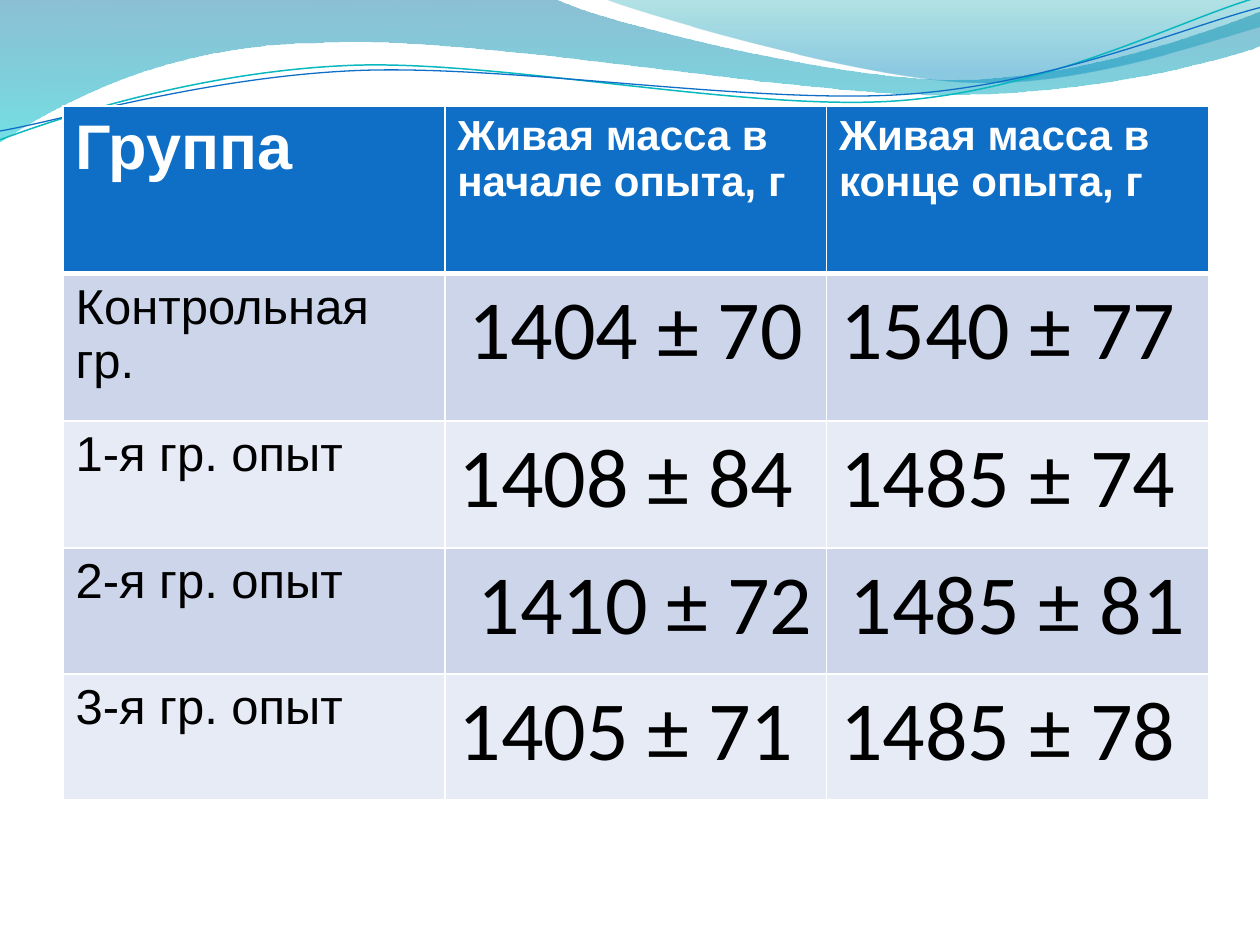
from math import cos, radians, sin

from lxml import etree
from pptx import Presentation
from pptx.dml.color import RGBColor
from pptx.enum.text import PP_ALIGN
from pptx.oxml.ns import qn
from pptx.util import Inches, Pt

CENTER = PP_ALIGN.CENTER
LEFT = PP_ALIGN.LEFT
BLANK_LAYOUT = 6
LINE_ROTATION = 357.3

HEADER_FILL = "0F6FC6"
BAND_FILLS = ("CCD5EA", "E7EBF5")
WHITE, BLACK = "FFFFFF", "000000"

# Wave outlines in inches: two numbers are a line, six a Bezier curve
BROAD_WAVE = [
    (0, -0.01), (4.4, -0.01),
    (4.76, 0.17, 6.64, 0.63, 7.58, 0.63), (8.53, 0.63, 9.58, 0.26, 10, 0.09),
    (10.01, 0.36),
    (9.83, 0.44, 8.7, 0.76, 7.46, 0.75), (6.22, 0.75, 3.82, 0.28, 2.57, 0.34),
    (1.29, 0.35, 0.46, 0.83, -0.01, 1.13), (0, -0.01),
]
RIGHT_WAVE = [
    (4.79, -0.01),
    (5.09, 0.11, 6.82, 0.62, 7.69, 0.65), (8.56, 0.69, 9.61, 0.32, 10, 0.21),
    (10, 0), (4.79, -0.01),
]
TEAL_LINE = [
    (0, 1.11),
    (0.48, 0.93, 1.58, 0.57, 2.77, 0.52), (3.95, 0.47, 5.93, 0.89, 7.13, 0.8),
    (8.33, 0.71, 9.38, 0.15, 9.98, -0.02),
]
BLUE_LINE = [
    (0, 1.04),
    (0.47, 0.96, 1.64, 0.61, 2.83, 0.56), (4.03, 0.51, 5.97, 0.83, 7.17, 0.75),
    (8.36, 0.67, 9.41, 0.21, 10, 0.06),
]

HEADERS = [
    ("Группа", 36),
    ("Живая масса в начале опыта, г", 24),
    ("Живая масса в конце опыта, г", 24),
]
GROUPS = [
    ("Контрольная гр.", "1404 ± 70", "1540 ± 77 "),
    ("1-я гр. опыт", "1408 ± 84 ", "1485 ± 74 "),
    ("2-я гр. опыт", " 1410 ± 72", "1485 ± 81"),
    ("3-я гр. опыт", "1405 ± 71 ", "1485 ± 78 "),
]
ROW_HEIGHTS = (1.33, 1.17, 1.01, 1, 1)


def color(hex_string):
    return RGBColor.from_string(hex_string)


def add_outline(slide, outline, box, rotation=0, close=False):
    """Freeform with Bezier curves, turned about the middle of its box."""
    left, top, width, height = box
    builder = slide.shapes.build_freeform(Inches(left), Inches(top))
    builder.add_line_segments(
        [(Inches(left + width), Inches(top + height))], close=False)
    shape = builder.convert_to_shape()
    shape.shadow.inherit = False
    shape.rotation = rotation
    cosine, sine = cos(radians(rotation)), sin(radians(rotation))

    # Replace the diagonal by the segments, in the box before it is turned
    geometry = shape.element.find(".//" + qn("a:path"))
    for child in list(geometry):
        geometry.remove(child)
    for index, segment in enumerate(outline):
        tag = "a:cubicBezTo" if len(segment) == 6 else "a:lnTo"
        step = etree.SubElement(geometry, qn(tag if index else "a:moveTo"))
        for x, y in zip(segment[::2], segment[1::2]):
            across, down = x - left - width / 2, y - top - height / 2
            local_x = across * cosine + down * sine + width / 2
            local_y = down * cosine - across * sine + height / 2
            etree.SubElement(step, qn("a:pt"), x=str(Inches(local_x)),
                             y=str(Inches(local_y)))
    if close:
        etree.SubElement(geometry, qn("a:close"))
    return shape


def add_wave(slide, outline, box, stops):
    """Filled wave; each stop is position, colour and opacity in percent."""
    shape = add_outline(slide, outline, box, close=True)
    shape.line.fill.background()
    shape.fill.gradient()
    shape.fill.gradient_angle = 270
    for stop, (position, hex_string, _) in zip(shape.fill.gradient_stops, stops):
        stop.position = position
        stop.color.rgb = color(hex_string)
    for element, (_, _, opacity) in zip(shape.element.iter(qn("a:srgbClr")), stops):
        etree.SubElement(element, qn("a:alpha"), val=str(opacity * 1000))


def add_wave_line(slide, outline, box, hex_string, width):
    shape = add_outline(slide, outline, box, LINE_ROTATION)
    shape.fill.background()
    shape.line.color.rgb = color(hex_string)
    shape.line.width = Pt(width)


def add_wave_header(slide):
    add_wave(slide, BROAD_WAVE, (-0.01, -0.01, 10.02, 1.14),
             [(0, "0074A1", 45), (1, "00C6CF", 55)])
    add_wave(slide, RIGHT_WAVE, (4.79, -0.01, 5.21, 0.7),
             [(0, "00A1A9", 30), (0.8, "008BBF", 45)])
    add_wave_line(slide, TEAL_LINE, (-0.02, 0.22, 10.02, 0.71), "0AB8BF", 0.85)
    add_wave_line(slide, BLUE_LINE, (-0.02, 0.3, 10.03, 0.58), "0F6FC6", 0.75)


def set_borders(cell, top_width, bottom_width):
    properties = cell._tc.get_or_add_tcPr()
    widths = {"a:lnL": 1, "a:lnR": 1, "a:lnT": top_width, "a:lnB": bottom_width}
    for tag, width in widths.items():
        line = etree.SubElement(properties, qn(tag), w=str(Pt(width)))
        fill = etree.SubElement(line, qn("a:solidFill"))
        etree.SubElement(fill, qn("a:srgbClr"), val=WHITE)


def write_cell(cell, text, size, font_name, text_color, fill, bold, alignment):
    cell.fill.solid()
    cell.fill.fore_color.rgb = color(fill)
    cell.text_frame.text = text
    paragraph = cell.text_frame.paragraphs[0]
    paragraph.alignment = alignment
    font = paragraph.runs[0].font
    font.size = Pt(size)
    font.name = font_name
    font.bold = bold
    font.color.rgb = color(text_color)


def add_mass_table(slide, left, top, width, height):
    table = slide.shapes.add_table(
        len(ROW_HEIGHTS), len(HEADERS), left, top, width, height).table
    for column in table.columns:
        column.width = width // len(HEADERS)
    for index, row in enumerate(table.rows):
        row.height = Inches(ROW_HEIGHTS[index])
        for cell in row.cells:
            set_borders(cell, 3 if index == 1 else 1, 3 if index == 0 else 1)

    # Header row
    for column, (text, size) in enumerate(HEADERS):
        write_cell(table.cell(0, column), text, size, "Arial", WHITE,
                   HEADER_FILL, True, LEFT)

    # Banded group rows
    for row, (group, *masses) in enumerate(GROUPS, start=1):
        fill = BAND_FILLS[(row - 1) % 2]
        write_cell(table.cell(row, 0), group, 28, "Arial", BLACK, fill, False, LEFT)
        for column, mass in enumerate(masses, start=1):
            write_cell(table.cell(row, column), mass, 48, "Calibri", BLACK,
                       fill, False, CENTER)


def main():
    presentation = Presentation()
    presentation.slide_width = Inches(10)
    presentation.slide_height = Inches(7.5)
    slide = presentation.slides.add_slide(presentation.slide_layouts[BLANK_LAYOUT])
    add_wave_header(slide)
    add_mass_table(slide, Inches(0.5), Inches(0.84), Inches(9.09), Inches(5.51))
    presentation.save("out.pptx")


if __name__ == "__main__":
    main()
